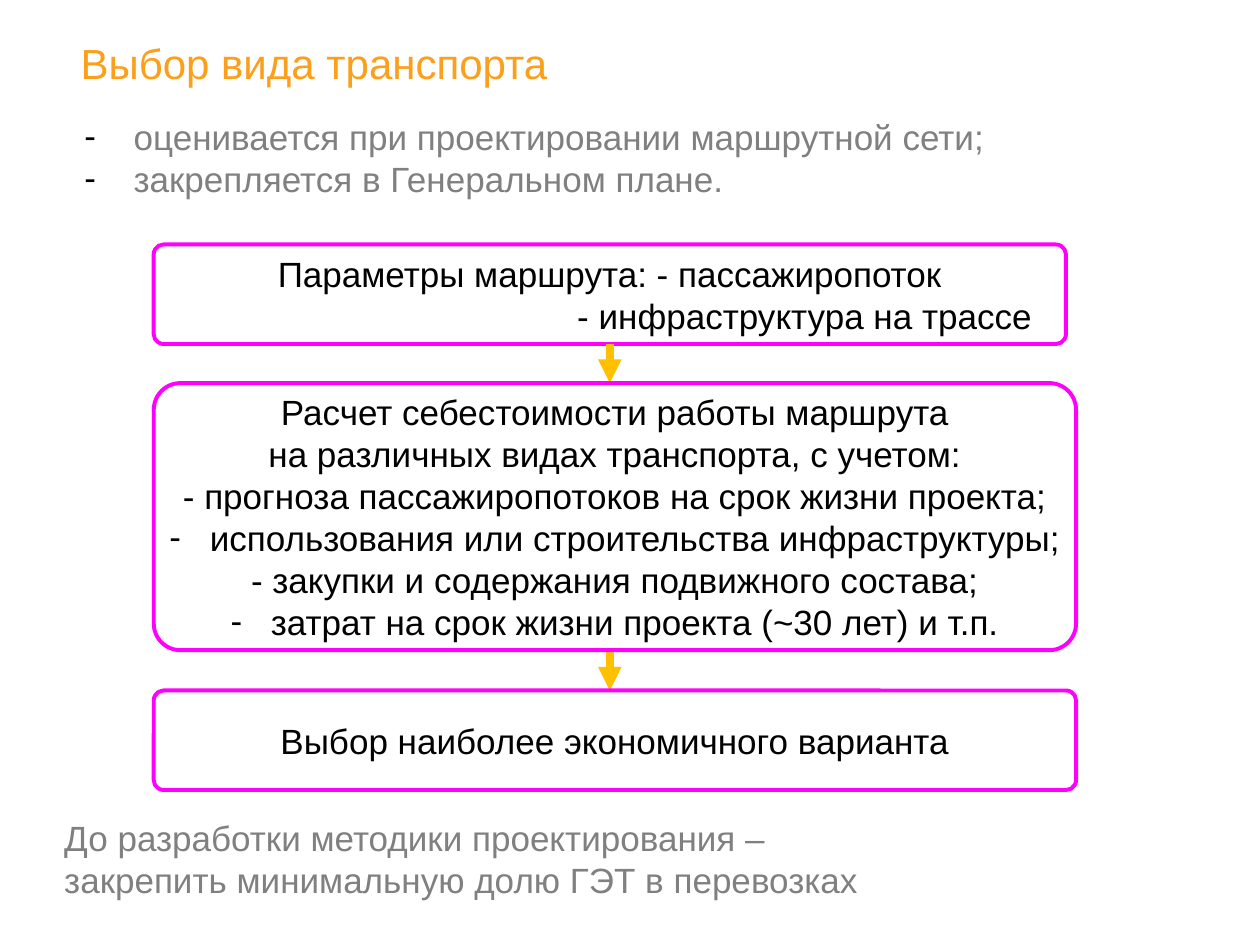
from lxml.etree import SubElement
from pptx import Presentation
from pptx.dml.color import RGBColor
from pptx.enum.shapes import MSO_CONNECTOR, MSO_SHAPE
from pptx.enum.text import MSO_ANCHOR, MSO_AUTO_SIZE, PP_ALIGN
from pptx.oxml.ns import qn
from pptx.util import Inches, Pt

COLORS = {
    "title": "FC9F1A",
    "muted": "808080",
    "text": "000000",
    "box": "FFFFFF",
    "border": "FF00FF",
    "arrow": "FFC000",
}
FONT = "Arial"
BOX_LEFT, BOX_WIDTH = 1.22, 7.32
ARROW_X = 4.84


def rgb(name):
    return RGBColor.from_string(COLORS[name])


def place(sp, left, top, width, height):
    sp.left, sp.top = Inches(left), Inches(top)
    sp.width, sp.height = Inches(width), Inches(height)


def set_frame(tf, anchor=MSO_ANCHOR.TOP, inset=0, wrap=True):
    tf.word_wrap = wrap
    tf.auto_size = MSO_AUTO_SIZE.NONE
    tf.vertical_anchor = anchor
    tf.margin_left = tf.margin_right = Inches(inset)
    tf.margin_top = tf.margin_bottom = Inches(inset / 2)


def add_text(tf, text, size=20, color="text", align=PP_ALIGN.LEFT,
             bullet=False, indent=0, hanging=0):
    """Write one paragraph, filling the empty first one if there is one."""
    p = tf.paragraphs[0]
    if p.runs:
        p = tf.add_paragraph()
    p.alignment = align
    p.space_before = p.space_after = Pt(0)
    pPr = p._p.get_or_add_pPr()
    pPr.set("marL", str(Inches(indent)))
    pPr.set("indent", str(-Inches(hanging)))
    if bullet:
        clr = SubElement(pPr, qn("a:buClr"))
        SubElement(clr, qn("a:srgbClr"), val=COLORS["text"])
        SubElement(pPr, qn("a:buFont"), typeface=FONT)
        SubElement(pPr, qn("a:buChar"), char="-")
    else:
        SubElement(pPr, qn("a:buNone"))
    r = p.add_run()
    r.text = text
    r.font.size = Pt(size)
    r.font.name = FONT
    r.font.color.rgb = rgb(color)


def fill_title(sp, *box):
    place(sp, *box)
    set_frame(sp.text_frame, MSO_ANCHOR.MIDDLE)
    add_text(sp.text_frame, "Выбор вида транспорта", size=24, color="title",
             indent=0.39)


def fill_list(sp, items, *box):
    place(sp, *box)
    set_frame(sp.text_frame)
    for item in items:
        add_text(sp.text_frame, item, color="muted", bullet=True,
                 indent=0.39, hanging=0.39)


def add_note(s, lines, *box):
    tf = s.shapes.add_textbox(*map(Inches, box)).text_frame
    set_frame(tf)
    for line in lines:
        add_text(tf, line, color="muted")


def add_step(s, lines, top, height, width=BOX_WIDTH):
    """Add a rounded box; lines are pairs of text and paragraph format."""
    sp = s.shapes.add_shape(MSO_SHAPE.ROUNDED_RECTANGLE, Inches(BOX_LEFT),
                            Inches(top), Inches(width), Inches(height))
    sp.adjustments[0] = 0.1
    sp.shadow.inherit = False
    sp.fill.solid()
    sp.fill.fore_color.rgb = rgb("box")
    fill_color = sp._element.spPr.find(qn("a:solidFill"))[0]
    SubElement(fill_color, qn("a:alpha"), val="60000")
    sp.line.color.rgb = rgb("border")
    sp.line.width = Pt(2.25)
    set_frame(sp.text_frame, MSO_ANCHOR.MIDDLE, inset=0.1, wrap=False)
    for text, fmt in lines:
        add_text(sp.text_frame, text, **{"align": PP_ALIGN.CENTER, **fmt})
    return sp


def add_arrow(s, top, bottom):
    cxn = s.shapes.add_connector(MSO_CONNECTOR.STRAIGHT, Inches(ARROW_X),
                                 Inches(top), Inches(ARROW_X), Inches(bottom))
    cxn.line.color.rgb = rgb("arrow")
    cxn.line.width = Pt(4.5)
    SubElement(cxn.line._get_or_add_ln(), qn("a:tailEnd"), type="triangle")
    SubElement(cxn._element.spPr, qn("a:effectLst"))


def add_flow(s):
    dash = {"bullet": True, "indent": 0.32, "hanging": 0.32}
    route = add_step(s, [
        ("Параметры маршрута: - пассажиропоток", {}),
        ("- инфраструктура на трассе",
         {"align": PP_ALIGN.LEFT, "indent": 3.24}),
    ], 1.94, 0.79, width=7.24)
    route.text_frame.word_wrap = True
    add_arrow(s, 2.73, 3.04)
    add_arrow(s, 5.17, 5.48)
    add_step(s, [
        ("Расчет себестоимости работы маршрута", {}),
        ("на различных видах транспорта, с учетом:", {}),
        ("- прогноза пассажиропотоков на срок жизни проекта;", {}),
        ("использования или строительства инфраструктуры;", dash),
        ("- закупки и содержания подвижного состава;", {}),
        ("затрат на срок жизни проекта (~30 лет) и т.п.", dash),
    ], 3.04, 2.12)
    add_step(s, [("Выбор наиболее экономичного варианта", {})], 5.48, 0.79)


def main():
    prs = Presentation()
    prs.slide_width, prs.slide_height = Inches(10), Inches(7.5)
    s = prs.slides.add_slide(prs.slide_layouts[1])
    fill_title(s.shapes.title, 0.25, 0.25, 7.64, 0.5)
    fill_list(s.placeholders[1], [
        "оценивается при проектировании маршрутной сети;",
        "закрепляется в Генеральном плане.",
    ], 0.67, 0.92, 9.53, 0.91)
    add_flow(s)
    add_note(s, [
        "До разработки методики проектирования –",
        "закрепить минимальную долю ГЭТ в перевозках",
    ], 0.51, 6.48, 9.25, 0.77)
    prs.save("out.pptx")


if __name__ == "__main__":
    main()
